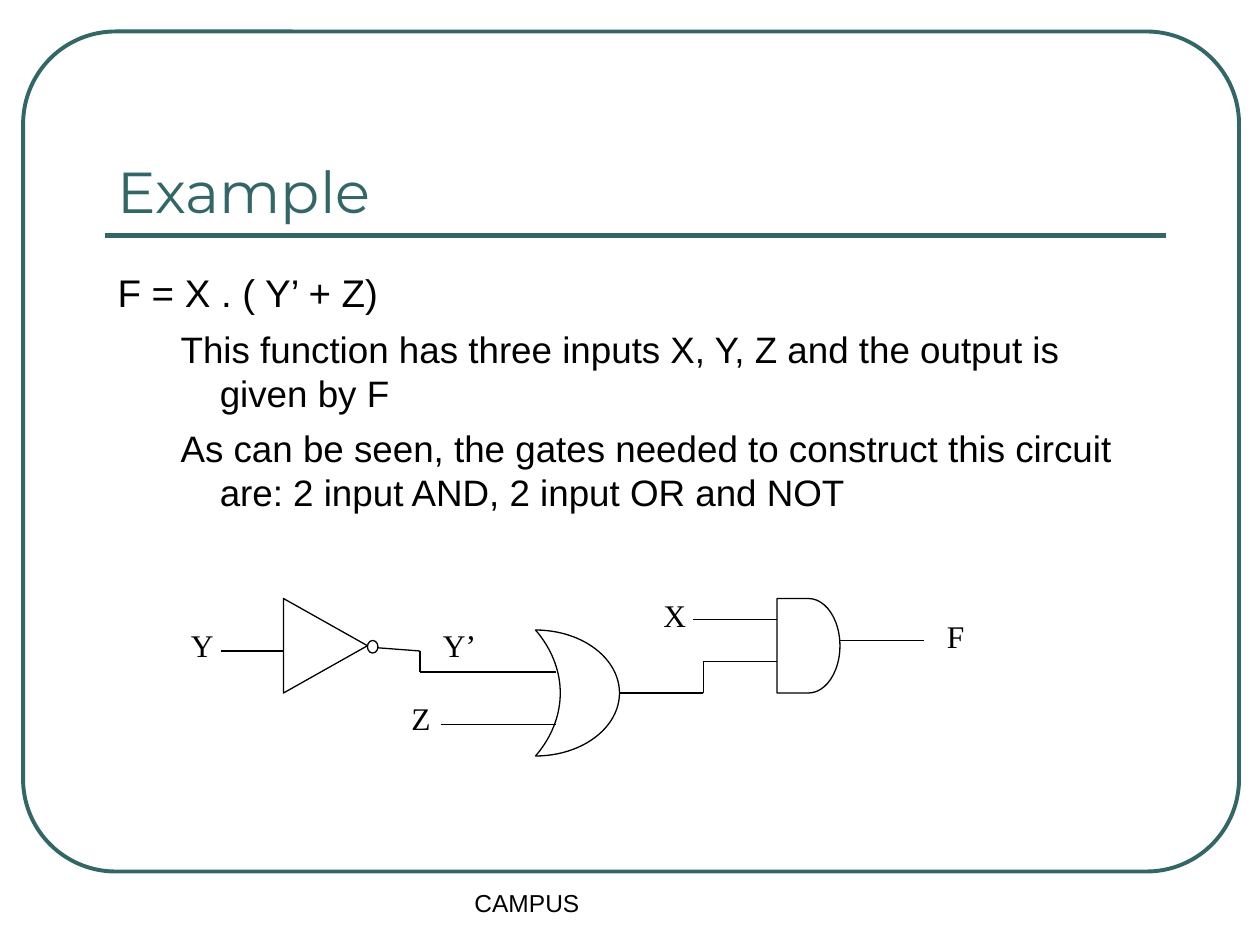
from dataclasses import dataclass

from lxml import etree
from pptx import Presentation
from pptx import util as u
from pptx.dml.color import RGBColor
from pptx.enum import shapes, text
from pptx.oxml.ns import qn

GRID = 2.54 / 12  # every position is counted in twelfths of an inch


@dataclass(frozen=True)
class Theme:
    teal: str = "336666"
    ink: str = "000000"
    title: tuple = ("Montserrat", 33)
    lead: tuple = ("Arial", 22)
    detail: tuple = ("Arial", 21)
    footer: tuple = ("Arial", 14)
    label: tuple = ("Times New Roman", 18)
    wire: float = 0.75
    frame: float = 2.25
    rule: float = 3


def grid(*steps):
    return [u.Cm(n * GRID) for n in steps]


class SlideBuilder:
    def __init__(self, prs, theme):
        self.theme = theme
        self.s = prs.slides.add_slide(prs.slide_layouts[1])

    def apply(self, target, **values):
        for name, value in values.items():
            setattr(target, name, value)

    def add_words(self, p, words, font, color):
        r = p.add_run()
        r.text = words
        self.apply(r.font, name=font[0], size=u.Pt(font[1]))
        r.font.color.rgb = RGBColor.from_string(color)

    def stroke(self, line, color, width):
        line.color.rgb = RGBColor.from_string(color)
        line.width = u.Pt(width)

    def place(self, sp, box):
        self.apply(sp, **dict(zip(("left", "top", "width", "height"), grid(*box))))

    def title(self, words, box):
        sp = self.s.shapes.title
        self.place(sp, box)
        tf = sp.text_frame
        self.apply(tf, vertical_anchor=text.MSO_ANCHOR.BOTTOM,
                   auto_size=text.MSO_AUTO_SIZE.NONE)
        p = tf.paragraphs[0]
        p.alignment = text.PP_ALIGN.LEFT
        self.add_words(p, words, self.theme.title, self.theme.teal)

    def body(self, items, box):
        """Fill the body with (level, words) items that hang without bullets."""
        formats = [(self.theme.lead, 7.8, 0.95, -0.95),
                   (self.theme.detail, 6.5, 2.06, -0.79)]
        sp = self.s.placeholders[1]
        self.place(sp, box)
        tf = sp.text_frame
        tf.auto_size = text.MSO_AUTO_SIZE.NONE
        for i, (level, words) in enumerate(items):
            p = tf.add_paragraph() if i else tf.paragraphs[0]
            font, before, margin, indent = formats[level]
            self.apply(p, level=level, space_before=u.Pt(before))
            self.add_words(p, words, font, self.theme.ink)
            pPr = p._p.get_or_add_pPr()
            pPr.set("marL", str(u.Cm(margin)))
            pPr.set("indent", str(u.Cm(indent)))
            etree.SubElement(pPr, qn("a:buNone"))

    def text(self, words, box, font):
        tf = self.s.shapes.add_textbox(*grid(*box)).text_frame
        tf.word_wrap = True
        self.add_words(tf.paragraphs[0], words, font, self.theme.ink)

    def outline(self, kind, box, color, width, rotation=0, adjust=None):
        sp = self.s.shapes.add_shape(kind, *grid(*box))
        sp.shadow.inherit = False
        sp.fill.background()
        sp.rotation = rotation
        if adjust is not None:
            sp.adjustments[0] = adjust
        self.stroke(sp.line, color, width)

    def gate(self, kind, box, **options):
        self.outline(kind, box, self.theme.ink, self.theme.wire, **options)

    def line(self, start, end, color, width):
        cxn = self.s.shapes.add_connector(
            shapes.MSO_CONNECTOR.STRAIGHT, *grid(*start, *end))
        self.stroke(cxn.line, color, width)
        etree.SubElement(cxn._element.spPr, qn("a:effectLst"))

    def wire(self, *points):
        for start, end in zip(points, points[1:]):
            self.line(start, end, self.theme.ink, self.theme.wire)


def main():
    prs = Presentation()
    prs.slide_width, prs.slide_height = u.Cm(25.4), u.Cm(19.05)
    theme = Theme()
    b = SlideBuilder(prs, theme)
    kinds = shapes.MSO_SHAPE

    b.outline(kinds.ROUNDED_RECTANGLE, (2.2, 3, 115.8, 80),
              theme.teal, theme.frame, adjust=0.11)
    b.line((10, 22.4), (111, 22.4), theme.teal, theme.rule)
    b.title("Example", (10, 7, 101, 15))
    b.body([
        (0, "F = X . ( Y’ + Z)"),
        (1, "This function has three inputs X, Y, Z and the output is given by F"),
        (1, "As can be seen, the gates needed to construct this circuit are: "
            "2 input AND, 2 input OR and NOT"),
    ], (10, 25, 101, 24.4))
    b.text("CAMPUS", (44, 84, 38, 6), theme.footer)

    # NOT gate with its bubble, then OR and AND
    b.gate(kinds.FLOWCHART_EXTRACT, (26.5, 57.5, 9, 8), rotation=90)
    b.gate(kinds.OVAL, (35, 61, 1, 1.2))
    b.gate(kinds.MOON, (51, 60, 8, 12), rotation=180, adjust=0.705)
    b.gate(kinds.FLOWCHART_DELAY, (74, 57, 6, 9))

    b.wire((21, 62), (27, 62))
    b.wire((36, 61.7), (40, 62), (40, 64), (53, 64))
    b.wire((42, 69), (53, 69))
    b.wire((59, 66), (67, 66), (67, 63), (74, 63))
    b.wire((66, 59), (74, 59))
    b.wire((80, 61), (88, 61))

    for words, left, top in [("Y", 17, 59), ("Y’", 41, 59), ("Z", 38, 66),
                             ("X", 62, 56.2), ("F", 89, 58.2)]:
        b.text(words, (left, top, 6, 4.8), theme.label)

    prs.save("out.pptx")


if __name__ == "__main__":
    main()
